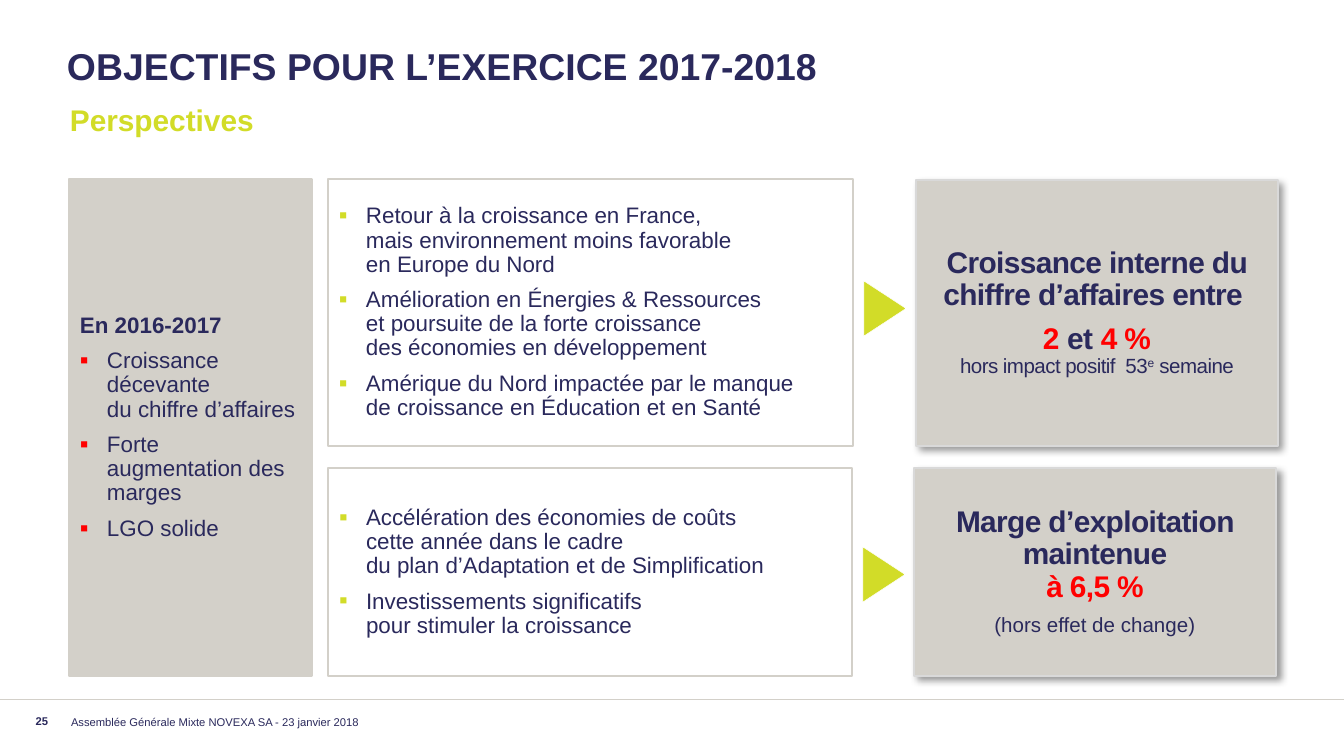
from copy import deepcopy

from lxml import etree
from pptx import Presentation
from pptx.dml.color import RGBColor
from pptx.enum.shapes import MSO_CONNECTOR, MSO_SHAPE
from pptx.enum.text import MSO_ANCHOR, MSO_AUTO_SIZE, PP_ALIGN
from pptx.oxml.ns import qn
from pptx.util import Emu, Pt

PX = 914400 / 134.4
FONT = "Arial"
NAVY = RGBColor(0x2A, 0x29, 0x5C)
LIME = RGBColor(0xD2, 0xDC, 0x28)
STONE = RGBColor(0xD3, 0xD0, 0xC9)
SILVER = RGBColor(0xD9, 0xD9, 0xD9)
RED = RGBColor(0xFF, 0x00, 0x00)
WHITE = RGBColor(0xFF, 0xFF, 0xFF)

RECT, ARROW = MSO_SHAPE.RECTANGLE, MSO_SHAPE.RIGHT_ARROW
STRAIGHT = MSO_CONNECTOR.STRAIGHT
LEFT, CENTER, RIGHT = PP_ALIGN.LEFT, PP_ALIGN.CENTER, PP_ALIGN.RIGHT
TOP, MIDDLE, BOTTOM = MSO_ANCHOR.TOP, MSO_ANCHOR.MIDDLE, MSO_ANCHOR.BOTTOM
NO_FIT = MSO_AUTO_SIZE.NONE

BULLET_INDENT = 27
BOX_INSET = 11


def px(*lengths):
    return [Emu(round(length * PX)) for length in lengths]


def add_xml(parent, tag, **attributes):
    return etree.SubElement(parent, qn(tag), attributes)


def set_frame(shape, anchor=TOP, inset=0):
    frame = shape.text_frame
    frame.word_wrap = True
    frame.auto_size = NO_FIT
    frame.vertical_anchor = anchor
    margin, = px(inset)
    frame.margin_left = frame.margin_right = margin
    frame.margin_top = frame.margin_bottom = margin
    return frame


def write(paragraph, text, size=12, color=NAVY, bold=False, tracking=0, raised=0):
    """Add text to a paragraph, each newline becoming a line break."""
    for index, line in enumerate(text.split("\n")):
        if index:
            paragraph.add_line_break()
            paragraph._p[-1].append(deepcopy(run._r.rPr))
        if not line:
            continue
        run = paragraph.add_run()
        run.text = line
        font = run.font
        font.name, font.size, font.bold = FONT, Pt(size), bold
        font.color.rgb = color
        if tracking:
            run._r.rPr.set("spc", str(tracking))
        if raised:
            run._r.rPr.set("baseline", str(raised))


def add_paragraph(frame, align=LEFT, bullet=None):
    """Start a paragraph in a box, with a square bullet if a colour is given."""
    first = frame.paragraphs[0]
    paragraph = frame.add_paragraph() if first.runs else first
    paragraph.alignment = align
    paragraph.line_spacing = 0.9
    paragraph.space_after = Pt(6)
    if bullet is not None:
        properties = paragraph._p.get_or_add_pPr()
        indent, = px(BULLET_INDENT)
        properties.set("marL", str(indent))
        properties.set("indent", str(-indent))
        add_xml(add_xml(properties, "a:buClr"), "a:srgbClr", val=str(bullet))
        add_xml(properties, "a:buSzPct", val="110000")
        add_xml(properties, "a:buFont", typeface=FONT)
        add_xml(properties, "a:buChar", char="▪")
    return paragraph


def add_bullets(frame, items, color):
    for item in items:
        write(add_paragraph(frame, bullet=color), item)


def add_label(slide, box, text, anchor=TOP, align=LEFT, **style):
    label = slide.shapes.add_textbox(*px(*box))
    paragraph = set_frame(label, anchor).paragraphs[0]
    paragraph.alignment = align
    write(paragraph, text, **style)


def add_shape(slide, kind, box, fill, line, width):
    shape = slide.shapes.add_shape(kind, *px(*box))
    if fill is None:
        shape.fill.background()
    else:
        shape.fill.solid()
        shape.fill.fore_color.rgb = fill
    shape.line.color.rgb = line
    shape.line.width = Pt(width)
    shape.shadow.inherit = False
    return shape


def add_box(slide, box, fill=None, line=STONE, width=0.75, shadow=False):
    """Draw a rectangle and return its text frame."""
    shape = add_shape(slide, RECT, box, fill, line, width)
    if shadow:
        effects = shape._element.spPr.find(qn("a:effectLst"))
        outer = add_xml(effects, "a:outerShdw", blurRad=str(Pt(4)), dist=str(Pt(3)),
                        dir="2700000", algn="tl", rotWithShape="0")
        black = add_xml(outer, "a:srgbClr", val="000000")
        add_xml(black, "a:alpha", val="40000")
    return set_frame(shape, MIDDLE, BOX_INSET)


def add_arrow(slide, left, top):
    arrow = add_shape(slide, ARROW, (left, top, 42, 55), LIME, WHITE, 0.25)
    arrow.adjustments[0] = 0.5
    arrow.adjustments[1] = 1.57


def add_rule(slide, y):
    rule = slide.shapes.add_connector(STRAIGHT, *px(0, y, 1344, y))
    rule.line.color.rgb = STONE
    rule.line.width = Pt(0.25)
    add_xml(rule._element.spPr, "a:effectLst")


def add_title(slide, box, text):
    title = slide.shapes.title
    title.left, title.top, title.width, title.height = px(*box)
    paragraph = set_frame(title).paragraphs[0]
    paragraph.alignment = LEFT
    write(paragraph, text, size=20, bold=True)


def main():
    deck = Presentation()
    deck.slide_width, deck.slide_height = px(1344, 756)
    slide = deck.slides.add_slide(deck.slide_layouts[5])

    # Heading
    add_title(slide, (67, 43, 1206, 79), "OBJECTIFS POUR L’EXERCICE 2017-2018")
    add_label(slide, (70, 102, 1206, 40), "Perspectives", size=16, color=LIME, bold=True)

    # Last year's results
    results = add_box(slide, (69, 179, 243, 497), fill=STONE, width=1.5)
    write(add_paragraph(results), "En 2016-2017", bold=True)
    add_bullets(results, [
        "Croissance décevante \ndu chiffre d’affaires",
        "Forte augmentation des marges",
        "LGO solide",
    ], RED)

    # Drivers of growth and margin
    growth_drivers = add_box(slide, (328, 179, 525, 267))
    add_bullets(growth_drivers, [
        "Retour à la croissance en France, \nmais environnement moins favorable \n"
        "en Europe du Nord",
        "Amélioration en Énergies & Ressources \net poursuite de la forte croissance \n"
        "des économies en développement",
        "Amérique du Nord impactée par le manque \nde croissance en Éducation et en Santé",
    ], LIME)
    margin_drivers = add_box(slide, (328, 468, 524, 208))
    add_bullets(margin_drivers, [
        "Accélération des économies de coûts \ncette année dans le cadre \n"
        "du plan d’Adaptation et de Simplification",
        "Investissements significatifs \npour stimuler la croissance",
    ], LIME)

    add_arrow(slide, 864, 281)
    add_arrow(slide, 863, 547)

    # Targets
    headline = {"size": 16, "bold": True, "tracking": -30}
    remark = {"size": 11, "tracking": -30}
    growth = add_box(slide, (916, 180, 362, 266), STONE, SILVER, shadow=True)
    write(add_paragraph(growth, CENTER),
          "Croissance interne du chiffre d’affaires entre ", **headline)
    rate = add_paragraph(growth, CENTER)
    write(rate, "2 ", color=RED, **headline)
    write(rate, "et", **headline)
    write(rate, " 4 %\n", color=RED, **headline)
    write(rate, "hors impact positif  53", **remark)
    write(rate, "e", raised=30000, **remark)
    write(rate, " semaine", **remark)

    margin = add_box(slide, (914, 468, 362, 208), STONE, SILVER, shadow=True)
    goal = add_paragraph(margin, CENTER)
    write(goal, "Marge d’exploitation maintenue\n", **headline)
    write(goal, "à 6,5 %", color=RED, **headline)
    write(add_paragraph(margin, CENTER), "(hors effet de change)", size=11)

    # Footer
    add_rule(slide, 699)
    add_label(slide, (13, 711, 35, 17), "25", BOTTOM, RIGHT, size=6, bold=True)
    add_label(slide, (71, 707, 513, 22),
              "Assemblée Générale Mixte NOVEXA SA - 23 janvier 2018", BOTTOM, size=6)

    deck.save("out.pptx")


if __name__ == "__main__":
    main()
